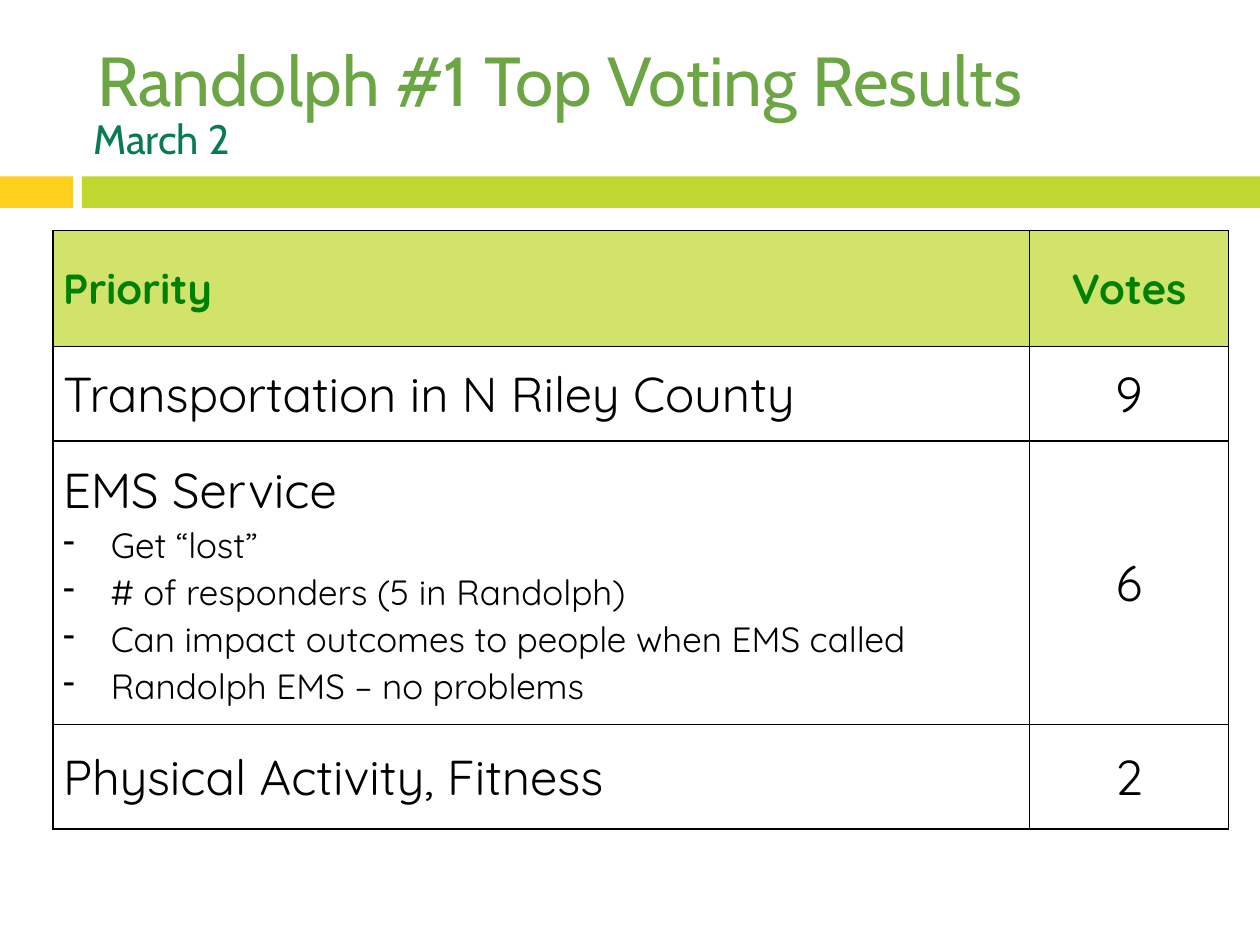
from lxml.etree import SubElement
from pptx import Presentation
from pptx.dml.color import RGBColor
from pptx.enum.shapes import MSO_SHAPE as Shape
from pptx.enum.text import MSO_ANCHOR as Anchor, MSO_AUTO_SIZE as AutoSize, PP_ALIGN as Align
from pptx.oxml.ns import qn
from pptx.util import Inches, Pt

COLUMNS = [7.75, 1.58]
ROWS = [0.92, 0.75, 2.25, 0.83]
HEADER = ("Priority", "Votes")
PRIORITIES = [
    ("Transportation in N Riley County", [], 9),
    ("EMS Service", [
        "Get “lost”",
        "# of responders (5 in Randolph)",
        "Can impact outcomes to people when EMS called",
        "Randolph EMS – no problems",
    ], 6),
    ("Physical Activity, Fitness", [], 2),
]


def color(value):
    """Turn a hex string into a colour."""
    return RGBColor.from_string(value)


def write(para, text, size=28, font="Quicksand", ink="000000", bold=False,
          align=Align.LEFT, spacing=None):
    """Write one formatted run into a paragraph."""
    para.alignment = align
    if spacing:
        para.line_spacing = spacing
    span = para.add_run()
    span.text = text
    span.font.size = Pt(size)
    span.font.name = font
    span.font.bold = bold
    span.font.color.rgb = color(ink)


def add_dash(para):
    """Give a paragraph a hanging dash bullet."""
    properties = para._p.get_or_add_pPr()
    properties.set("marL", str(Inches(0.38)))
    properties.set("indent", str(-Inches(0.38)))
    SubElement(properties, qn("a:buChar"), char="-")


def add_bar(page, left, width, fill):
    """Draw one segment of the band under the title."""
    bar = page.shapes.add_shape(Shape.RECTANGLE, Inches(left), Inches(1.4),
                                Inches(width), Inches(0.25))
    bar.shadow.inherit = False
    bar.fill.solid()
    bar.fill.fore_color.rgb = color(fill)
    bar.line.fill.background()


def add_heading(box, left, top, height, text, **style):
    """Place a heading box and write its line."""
    box.left, box.top = Inches(left), Inches(top)
    box.width, box.height = Inches(8.92), Inches(height)
    frame = box.text_frame
    frame.word_wrap = True
    frame.auto_size = AutoSize.NONE
    frame.vertical_anchor = Anchor.MIDDLE
    write(frame.paragraphs[0], text, font="Cabin", **style)


def add_borders(cell):
    """Rule all four sides of a cell in black."""
    properties = cell._tc.get_or_add_tcPr()
    for side in ("lnL", "lnR", "lnT", "lnB"):
        line = SubElement(properties, qn(f"a:{side}"), w=str(Pt(1)))
        fill = SubElement(line, qn("a:solidFill"))
        SubElement(fill, qn("a:srgbClr"), val="000000")


def fill_cell(cell, text, details=(), fill=None, **style):
    """Format a cell and write its text and dashed details."""
    cell.margin_left = cell.margin_right = Inches(0.08)
    cell.margin_top, cell.margin_bottom = 0, Inches(0.02)
    cell.vertical_anchor = Anchor.MIDDLE
    add_borders(cell)
    if fill:
        cell.fill.solid()
        cell.fill.fore_color.rgb = color(fill)
    else:
        cell.fill.background()
    frame = cell.text_frame
    write(frame.paragraphs[0], text, spacing=1.07, **style)
    for detail in details:
        para = frame.add_paragraph()
        add_dash(para)
        write(para, detail, size=20, spacing=1.07)


def add_votes_table(page):
    """Add the table of priorities and votes."""
    table = page.shapes.add_table(len(ROWS), len(COLUMNS), Inches(0.42), Inches(1.83),
                                  Inches(sum(COLUMNS)), Inches(sum(ROWS))).table
    table.first_row = table.horz_banding = False
    for column, width in zip(table.columns, COLUMNS):
        column.width = Inches(width)
    for row, height in zip(table.rows, ROWS):
        row.height = Inches(height)
    for index, (text, align) in enumerate(zip(HEADER, (Align.LEFT, Align.CENTER))):
        fill_cell(table.cell(0, index), text, fill="D2E36B", size=24, ink="008000",
                  bold=True, align=align)
    for index, (priority, details, votes) in enumerate(PRIORITIES, 1):
        fill_cell(table.cell(index, 0), priority, details)
        fill_cell(table.cell(index, 1), str(votes), align=Align.CENTER)


def main():
    """Build and save the slide."""
    deck = Presentation()
    deck.slide_width, deck.slide_height = Inches(10), Inches(7.5)
    page = deck.slides.add_slide(deck.slide_layouts[5])
    add_bar(page, 0, 0.58, "FFCF1D")
    add_bar(page, 0.65, 9.35, "C0D730")
    add_heading(page.shapes.title, 0.67, 0.25, 0.75, "Randolph #1 Top Voting Results",
                size=39.6, ink="6CA644")
    add_heading(page.shapes.add_textbox(0, 0, 0, 0), 0.64, 0.83, 0.54, "March 2",
                size=23.4, ink="087B54")
    add_votes_table(page)
    deck.save("out.pptx")


if __name__ == "__main__":
    main()
